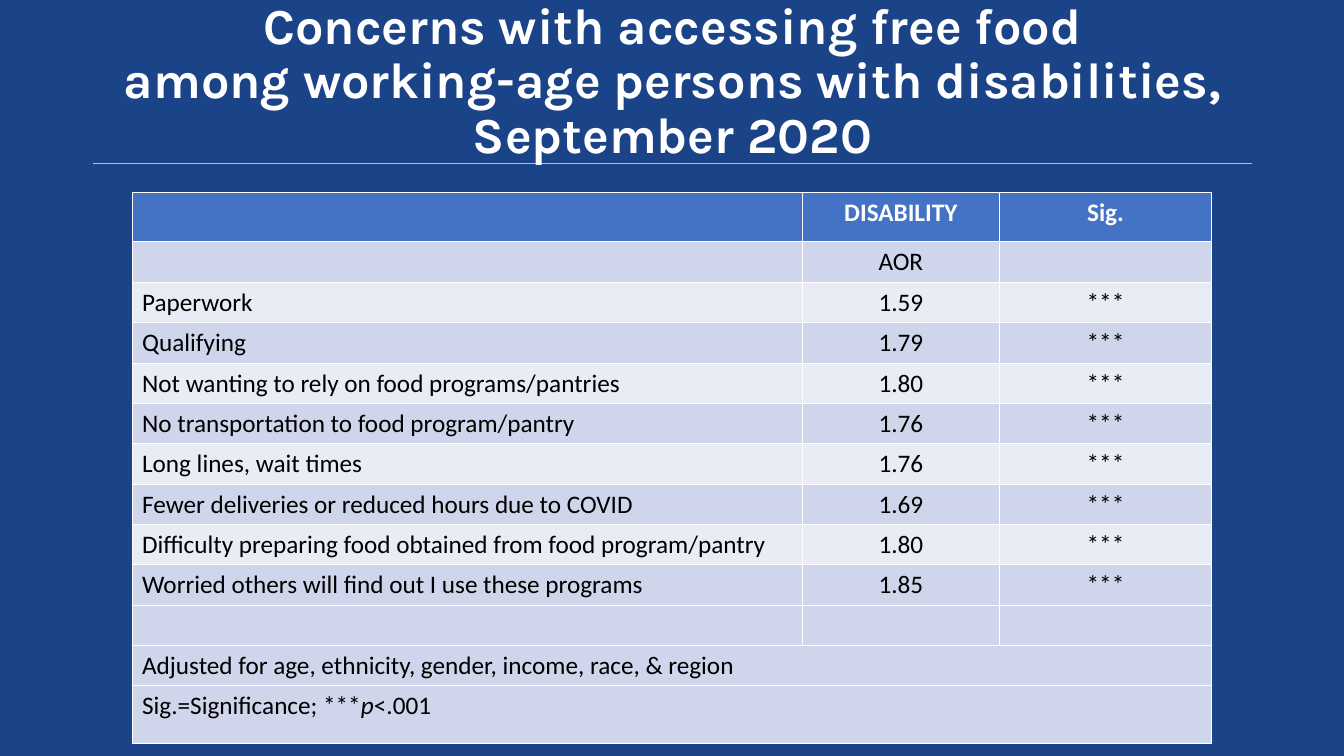
from lxml import etree
from pptx import Presentation
from pptx.dml.color import RGBColor
from pptx.enum.shapes import MSO_CONNECTOR
from pptx.enum.text import MSO_ANCHOR, PP_ALIGN
from pptx.oxml.ns import qn
from pptx.util import Inches, Pt

TITLE = [
    "Concerns with accessing free food",
    "among working-age persons with disabilities, September 2020",
]
HEADER = ["", "DISABILITY", "Sig."]
CONCERNS = [
    ("Paperwork", "1.59"),
    ("Qualifying", "1.79"),
    ("Not wanting to rely on food programs/pantries", "1.80"),
    ("No transportation to food program/pantry", "1.76"),
    ("Long lines, wait times", "1.76"),
    ("Fewer deliveries or reduced hours due to COVID", "1.69"),
    ("Difficulty preparing food obtained from food program/pantry", "1.80"),
    ("Worried others will find out I use these programs", "1.85"),
]
NOTES = [
    [("Adjusted for age, ethnicity, gender, income, race, & region", False)],
    [("Sig.=Significance; ***", False), ("p", True), ("<.001", False)],
]
SIGNIFICANCE = "***"

NAVY = RGBColor(0x1B, 0x43, 0x88)
BLUE = RGBColor(0x44, 0x72, 0xC4)
BAND_DARK = RGBColor(0xCF, 0xD5, 0xEA)
BAND_LIGHT = RGBColor(0xE9, 0xEB, 0xF5)
GREY = RGBColor(0xBF, 0xBF, 0xBF)
WHITE = RGBColor(0xFF, 0xFF, 0xFF)
BLACK = RGBColor(0, 0, 0)

CENTER, LEFT = PP_ALIGN.CENTER, PP_ALIGN.LEFT
TOP, MIDDLE, BOTTOM = MSO_ANCHOR.TOP, MSO_ANCHOR.MIDDLE, MSO_ANCHOR.BOTTOM
STRAIGHT = MSO_CONNECTOR.STRAIGHT

MARGIN, CONTENT_W = 0.92, 11.5
TITLE_TOP, TITLE_H, RULE_Y = 0.72, 0.96, 1.62
TABLE_LEFT, TABLE_TOP = 1.31, 1.91
COLUMNS = [6.65, 1.95, 2.11]
HEAD_H, ROW_H, LAST_H = 0.49, 0.4, 0.57


def add_run(p, text, font, size, color, bold=False, italic=False):
    r = p.add_run()
    r.text = text
    r.font.name = font
    r.font.size = Pt(size)
    r.font.color.rgb = color
    r.font.bold = bold
    r.font.italic = italic


def add_borders(cell):
    tc_pr = cell._tc.get_or_add_tcPr()
    for i, side in enumerate(("lnL", "lnR", "lnT", "lnB")):
        ln = etree.Element(qn("a:" + side), w=str(Pt(0.75)))
        fill = etree.SubElement(ln, qn("a:solidFill"))
        etree.SubElement(fill, qn("a:srgbClr"), val=str(WHITE))
        tc_pr.insert(i, ln)


def add_title(s):
    box = s.shapes.add_textbox(
        Inches(MARGIN), Inches(TITLE_TOP), Inches(CONTENT_W), Inches(TITLE_H))
    tf = box.text_frame
    tf.word_wrap = True
    tf.vertical_anchor = BOTTOM
    p = tf.paragraphs[0]
    p.alignment = CENTER
    p.line_spacing = 0.9
    for i, line in enumerate(TITLE):
        if i:
            p.add_line_break()
        add_run(p, line, "Karla", 36, WHITE, bold=True)


def add_rule(s):
    rule = s.shapes.add_connector(
        STRAIGHT, Inches(MARGIN), Inches(RULE_Y),
        Inches(MARGIN + CONTENT_W), Inches(RULE_Y))
    rule.line.color.rgb = GREY
    rule.line.width = Pt(1)
    etree.SubElement(rule._element.spPr, qn("a:effectLst"))


def add_concerns_table(s):
    plain = [HEADER, ["", "AOR", ""]]
    plain += [[name, aor, SIGNIFICANCE] for name, aor in CONCERNS]
    plain.append(["", "", ""])
    rows = [[[(text, False)] if text else [] for text in row] for row in plain]
    rows += [[note, [], []] for note in NOTES]
    heights = [HEAD_H] + [ROW_H] * (len(rows) - 2) + [LAST_H]

    table = s.shapes.add_table(
        len(rows), len(COLUMNS), Inches(TABLE_LEFT), Inches(TABLE_TOP),
        Inches(sum(COLUMNS)), Inches(sum(heights))).table
    for column, width in zip(table.columns, COLUMNS):
        column.width = Inches(width)
    first_note = len(plain)
    for i, row in enumerate(rows):
        table.rows[i].height = Inches(heights[i])
        head = i == 0
        light = i % 2 == 0 and i < first_note - 1
        for j, runs in enumerate(row):
            cell = table.cell(i, j)
            cell.fill.solid()
            cell.fill.fore_color.rgb = (
                BLUE if head else BAND_LIGHT if light else BAND_DARK)
            add_borders(cell)
            cell.vertical_anchor = MIDDLE if j == 1 and not head else TOP
            p = cell.text_frame.paragraphs[0]
            p.alignment = CENTER if j else LEFT
            for text, italic in runs:
                add_run(p, text, "Calibri", 18, WHITE if head else BLACK,
                        head, italic)
        if i >= first_note:
            table.cell(i, 0).merge(table.cell(i, len(COLUMNS) - 1))


def main():
    prs = Presentation()
    prs.slide_width, prs.slide_height = Inches(13.33), Inches(7.5)
    s = prs.slides.add_slide(prs.slide_layouts[6])
    s.background.fill.solid()
    s.background.fill.fore_color.rgb = NAVY
    add_rule(s)
    add_title(s)
    add_concerns_table(s)
    prs.save("out.pptx")


if __name__ == "__main__":
    main()
